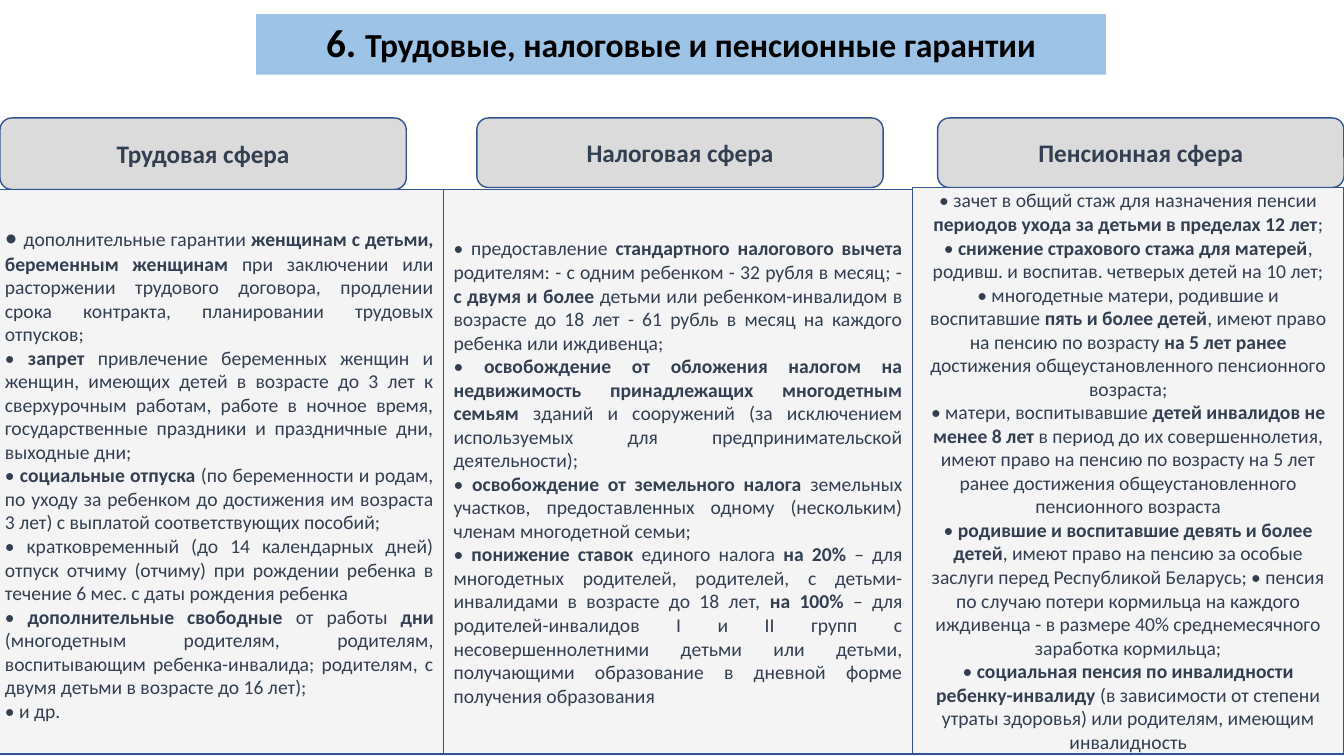
import pptx
import pptx.util
import pptx.dml.color
import pptx.enum.shapes
import pptx.enum.text
from lxml import etree

# Content: **...** marks bold text
TITLE_NUMBER = "6. "
TITLE = "Трудовые, налоговые и пенсионные гарантии"
BULLET = "• "

LABOUR = [
    "дополнительные гарантии **женщинам с детьми, беременным женщинам** при заключении или "
    "расторжении трудового договора, продлении срока контракта, планировании трудовых отпусков;",
    "**запрет** привлечение беременных женщин и женщин, имеющих детей в возрасте до 3 лет к "
    "сверхурочным работам, работе в ночное время, государственные праздники и праздничные дни, "
    "выходные дни;",
    "**социальные отпуска** (по беременности и родам, по уходу за ребенком до достижения им "
    "возраста 3 лет) с выплатой соответствующих пособий;",
    "кратковременный (до 14 календарных дней) отпуск отчиму (отчиму) при рождении ребенка в "
    "течение 6 мес. с даты рождения ребенка",
    "**дополнительные свободные** от работы **дни** (многодетным родителям, родителям, "
    "воспитывающим ребенка-инвалида; родителям, с двумя детьми в возрасте до 16 лет);",
    "и др.",
]
TAX = [
    "предоставление **стандартного налогового вычета** родителям: - с одним ребенком - 32 рубля "
    "в месяц; - **с двумя и более** детьми или ребенком-инвалидом в возрасте до 18 лет - 61 рубль "
    "в месяц на каждого ребенка или иждивенца;",
    "**освобождение от обложения налогом на недвижимость принадлежащих многодетным семьям** "
    "зданий и сооружений (за исключением используемых для предпринимательской деятельности);",
    "**освобождение от земельного налога** земельных участков, предоставленных одному "
    "(нескольким) членам многодетной семьи;",
    "**понижение ставок** единого налога **на 20%** – для многодетных родителей, родителей, с "
    "детьми-инвалидами в возрасте до 18 лет, **на 100%** – для родителей-инвалидов I и II групп с "
    "несовершеннолетними детьми или детьми, получающими образование в дневной форме получения "
    "образования",
]
PENSION = [
    "зачет в общий стаж для назначения пенсии **периодов ухода за детьми в пределах 12 лет**;",
    "**снижение страхового стажа для матерей**, родивш. и воспитав. четверых детей на 10 лет;",
    "многодетные матери, родившие и воспитавшие **пять и более детей**, имеют право на пенсию по "
    "возрасту **на 5 лет ранее** достижения общеустановленного пенсионного возраста;",
    "матери, воспитывавшие **детей инвалидов не менее 8 лет** в период до их совершеннолетия, "
    "имеют право на пенсию по возрасту на 5 лет ранее достижения общеустановленного пенсионного "
    "возраста",
    "**родившие и воспитавшие девять и более детей**, имеют право на пенсию за особые заслуги "
    "перед Республикой Беларусь; • пенсия по случаю потери кормильца на каждого иждивенца - в "
    "размере 40% среднемесячного заработка кормильца;",
    "**социальная пенсия по инвалидности ребенку-инвалиду** (в зависимости от степени утраты "
    "здоровья) или родителям, имеющим инвалидность",
]

COLORS = {"title": "9DC3E6", "header": "DBDBDB", "body": "F2F2F2",
          "line": "325491", "text": "333F50", "black": "000000"}
FONT = "Calibri"
BODY_ALPHA = 78

ALIGN = pptx.enum.text.PP_ALIGN
SHAPE = pptx.enum.shapes.MSO_SHAPE
Inches, Pt = pptx.util.Inches, pptx.util.Pt

# Layout in inches
SLIDE_W, SLIDE_H = 13.33, 7.5
HEADER_W, HEADER_TOP = 4.03, 1.17
BODY_BOTTOM = 7.48
COLUMN_EDGES = [-0.05, 4.4, 9.05, SLIDE_W]
# Heading, header left, header bottom, alignment, size of first bullet, points
COLUMNS = [
    ("Трудовая сфера", 0, 1.88, 1.88, ALIGN.JUSTIFY, 18, LABOUR),
    ("Налоговая сфера", 4.73, 1.86, 1.88, ALIGN.JUSTIFY, 14, TAX),
    ("Пенсионная сфера", SLIDE_W - HEADER_W, 1.86, 1.86, ALIGN.CENTER, 14, PENSION),
]


def rgb(name):
    return pptx.dml.color.RGBColor.from_string(COLORS[name])


def add_box(slide, kind, left, top, right, bottom, fill, outlined=True):
    sp = slide.shapes.add_shape(kind, Inches(left), Inches(top),
                                Inches(right - left), Inches(bottom - top))
    sp.shadow.inherit = False
    sp.fill.solid()
    sp.fill.fore_color.rgb = rgb(fill)
    if outlined:
        sp.line.color.rgb = rgb("line")
        sp.line.width = Pt(1)
    else:
        sp.line.fill.background()
    sp.text_frame.word_wrap = True
    sp.text_frame.vertical_anchor = pptx.enum.text.MSO_ANCHOR.MIDDLE
    return sp


def style(p, size, color="text", align=ALIGN.CENTER, bold=False):
    p.alignment = align
    p.font.name, p.font.size, p.font.bold = FONT, Pt(size), bold
    p.font.color.rgb = rgb(color)


def add_run(p, text, size=None, bold=None):
    r = p.add_run()
    r.text = text
    r.font.bold = bold
    if size:
        r.font.size = Pt(size)


def set_alpha(sp, percent):
    color = sp.fill._xPr.find(".//" + pptx.oxml.ns.qn("a:srgbClr"))
    etree.SubElement(color, pptx.oxml.ns.qn("a:alpha"), val=str(percent * 1000))


def add_points(tf, points, align, first_size):
    for i, point in enumerate(points):
        p = tf.add_paragraph() if i else tf.paragraphs[0]
        style(p, 14, align=align)
        add_run(p, BULLET, first_size if i == 0 else None)
        for j, part in enumerate(point.split("**")):
            if part:
                add_run(p, part, bold=True if j % 2 else None)


def main():
    prs = pptx.Presentation()
    prs.slide_width, prs.slide_height = Inches(SLIDE_W), Inches(SLIDE_H)
    slide = prs.slides.add_slide(prs.slide_layouts[6])

    # Title band
    sp = add_box(slide, SHAPE.RECTANGLE, 2.54, 0.14, 10.97, 0.74, "title", outlined=False)
    p = sp.text_frame.paragraphs[0]
    style(p, 24, "black", bold=True)
    p.line_spacing = 0.9
    add_run(p, TITLE_NUMBER, 28)
    add_run(p, TITLE)

    # Column headers
    for heading, left, bottom, *_ in COLUMNS:
        sp = add_box(slide, SHAPE.ROUNDED_RECTANGLE, left, HEADER_TOP,
                     left + HEADER_W, bottom, "header")
        p = sp.text_frame.paragraphs[0]
        style(p, 18, bold=True)
        add_run(p, heading)

    # Column bodies
    for column, left, right in zip(COLUMNS, COLUMN_EDGES, COLUMN_EDGES[1:]):
        top, align, first_size, points = column[3:]
        sp = add_box(slide, SHAPE.RECTANGLE, left, top, right, BODY_BOTTOM, "body")
        set_alpha(sp, BODY_ALPHA)
        add_points(sp.text_frame, points, align, first_size)

    prs.save("out.pptx")


if __name__ == "__main__":
    main()
